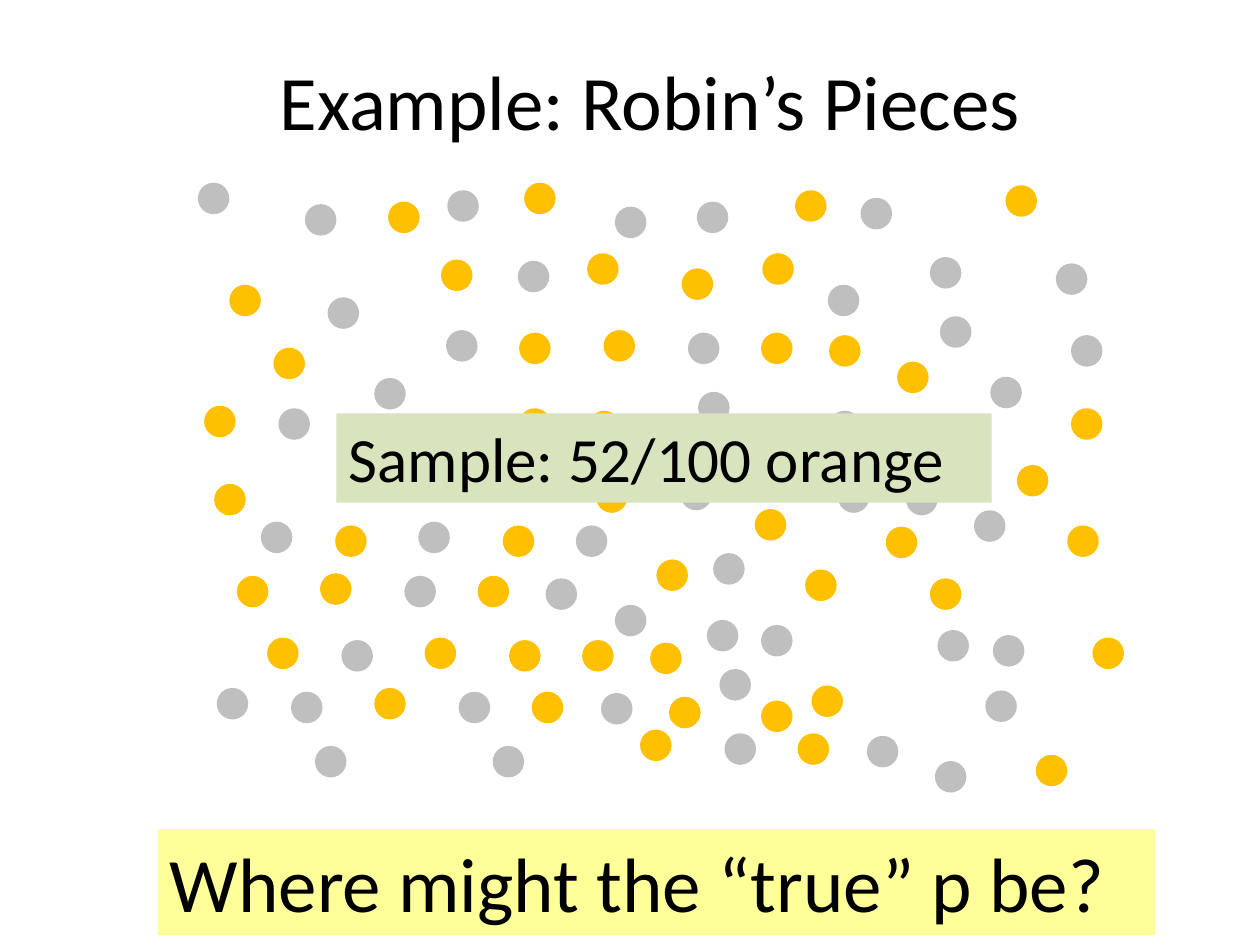
from dataclasses import dataclass

from pptx import Presentation
from pptx.dml.color import RGBColor
from pptx.enum.shapes import MSO_SHAPE
from pptx.enum.text import MSO_ANCHOR, MSO_AUTO_SIZE, PP_ALIGN
from pptx.shapes.group import GroupShape
from pptx.slide import Slide
from pptx.text.text import TextFrame
from pptx.util import Cm, Pt

OVAL = MSO_SHAPE.OVAL
MIDDLE = MSO_ANCHOR.MIDDLE
FIT_TEXT = MSO_AUTO_SIZE.SHAPE_TO_FIT_TEXT
CENTER = PP_ALIGN.CENTER
LEFT = PP_ALIGN.LEFT

BLACK = RGBColor(0x00, 0x00, 0x00)
GREY = RGBColor(0xBF, 0xBF, 0xBF)
ORANGE = RGBColor(0xFF, 0xC0, 0x00)
GREEN = RGBColor(0xD7, 0xE4, 0xBD)
YELLOW = RGBColor(0xFF, 0xFF, 0x99)

FONT = "Calibri"
CM_PER_INCH = 2.54
CANDY_SIZE = 0.25
TITLE_ONLY = 5


@dataclass(frozen=True)
class Candies:
    color: RGBColor
    corners: tuple[tuple[float, float], ...]


@dataclass(frozen=True)
class Banner:
    text: str
    left: float
    top: float
    width: float
    height: float
    size: int
    color: RGBColor


CANDIES = (
    Candies(GREY, (
        (1.57, 1.45), (6.83, 1.57), (8.38, 2.09), (4.88, 1.64), (5.53, 1.6),
        (3.55, 1.51), (2.42, 1.62), (7.38, 2.04), (6.57, 2.26), (4.11, 2.07),
        (2.6, 2.36), (7.44, 5), (6.04, 4.96), (5.71, 5.31), (2.71, 5.08),
        (6.58, 3.26), (5.54, 3.11), (2.97, 3), (2.21, 3.24), (3.54, 2.62),
        (7.86, 2.99), (8.5, 2.66), (7.46, 2.51), (5.46, 2.64), (2.07, 4.14),
        (5.66, 4.39), (4.57, 4.17), (3.32, 4.14), (2.5, 5.92), (6.88, 5.84),
        (7.88, 5.04), (7.42, 6.04), (5.75, 5.82), (3.91, 5.92), (7.19, 3.84),
        (7.73, 4.05), (6.65, 3.82), (5.4, 3.8), (5.61, 4.92), (4.33, 4.59),
        (4.88, 4.8), (3.21, 4.57), (1.72, 5.46), (7.82, 5.48), (4.77, 5.5),
        (3.64, 5.49), (2.31, 5.49),
    )),
    Candies(ORANGE, (
        (6.31, 1.51), (4.16, 1.45), (3.08, 1.6), (1.82, 2.26), (7.98, 1.47),
        (5.41, 2.13), (6.05, 2.01), (4.66, 2.01), (3.5, 2.06), (2.12, 5.06),
        (6.44, 5.44), (5.16, 5.1), (4.62, 5.08), (4.04, 5.08), (3.37, 5.06),
        (1.62, 3.22), (4.67, 3.26), (4.12, 3.24), (6.58, 2.66), (7.12, 2.87),
        (6.04, 2.64), (4.79, 2.62), (4.12, 2.64), (6.39, 4.52), (7.03, 4.18),
        (2.17, 2.76), (5.99, 4.04), (3.99, 4.17), (2.66, 4.17), (8.22, 5.99),
        (8.67, 5.06), (6.33, 5.82), (5.08, 5.79), (8.47, 4.17), (8.5, 3.24),
        (8.07, 3.69), (4.73, 3.82), (1.7, 3.84), (7.38, 4.59), (5.21, 4.44),
        (3.79, 4.57), (2.54, 4.55), (1.88, 4.57), (6.04, 5.56), (5.31, 5.53),
        (4.22, 5.49), (2.97, 5.46),
    )),
)

BANNERS = (
    Banner("Sample: 52/100 orange", 2.67, 3.28, 5.2, 0.71, 36, GREEN),
    Banner("Where might the “true” p be?", 1.25, 6.58, 7.92, 0.84, 44, YELLOW),
)


def length(inches: float) -> Cm:
    return Cm(inches * CM_PER_INCH)


def write_text(frame: TextFrame, text: str, size: int, alignment: PP_ALIGN) -> None:
    frame.text = text
    para = frame.paragraphs[0]
    para.alignment = alignment
    para.font.name = FONT
    para.font.size = Pt(size)
    para.font.color.rgb = BLACK


def draw_title(page: Slide, text: str) -> None:
    title = page.shapes.title
    title.left, title.top = length(0.66), length(0.25)
    title.width, title.height = length(9), length(1.09)
    title.text_frame.vertical_anchor = MIDDLE
    write_text(title.text_frame, text, 44, CENTER)


def draw_candies(group: GroupShape, candies: Candies) -> None:
    size = length(CANDY_SIZE)
    for left, top in candies.corners:
        candy = group.shapes.add_shape(OVAL, length(left), length(top), size, size)
        candy.shadow.inherit = False
        candy.fill.solid()
        candy.fill.fore_color.rgb = candies.color
        candy.line.fill.background()


def draw_banner(page: Slide, banner: Banner) -> None:
    box = page.shapes.add_textbox(
        length(banner.left), length(banner.top),
        length(banner.width), length(banner.height),
    )
    box.fill.solid()
    box.fill.fore_color.rgb = banner.color
    box.text_frame.word_wrap = True
    box.text_frame.auto_size = FIT_TEXT
    write_text(box.text_frame, banner.text, banner.size, LEFT)


def main() -> None:
    deck = Presentation()
    deck.slide_width, deck.slide_height = length(10), length(7.5)
    page = deck.slides.add_slide(deck.slide_layouts[TITLE_ONLY])
    draw_title(page, "Example: Robin’s Pieces")
    group = page.shapes.add_group_shape()
    for candies in CANDIES:
        draw_candies(group, candies)
    for banner in BANNERS:
        draw_banner(page, banner)
    deck.save("out.pptx")


if __name__ == "__main__":
    main()
